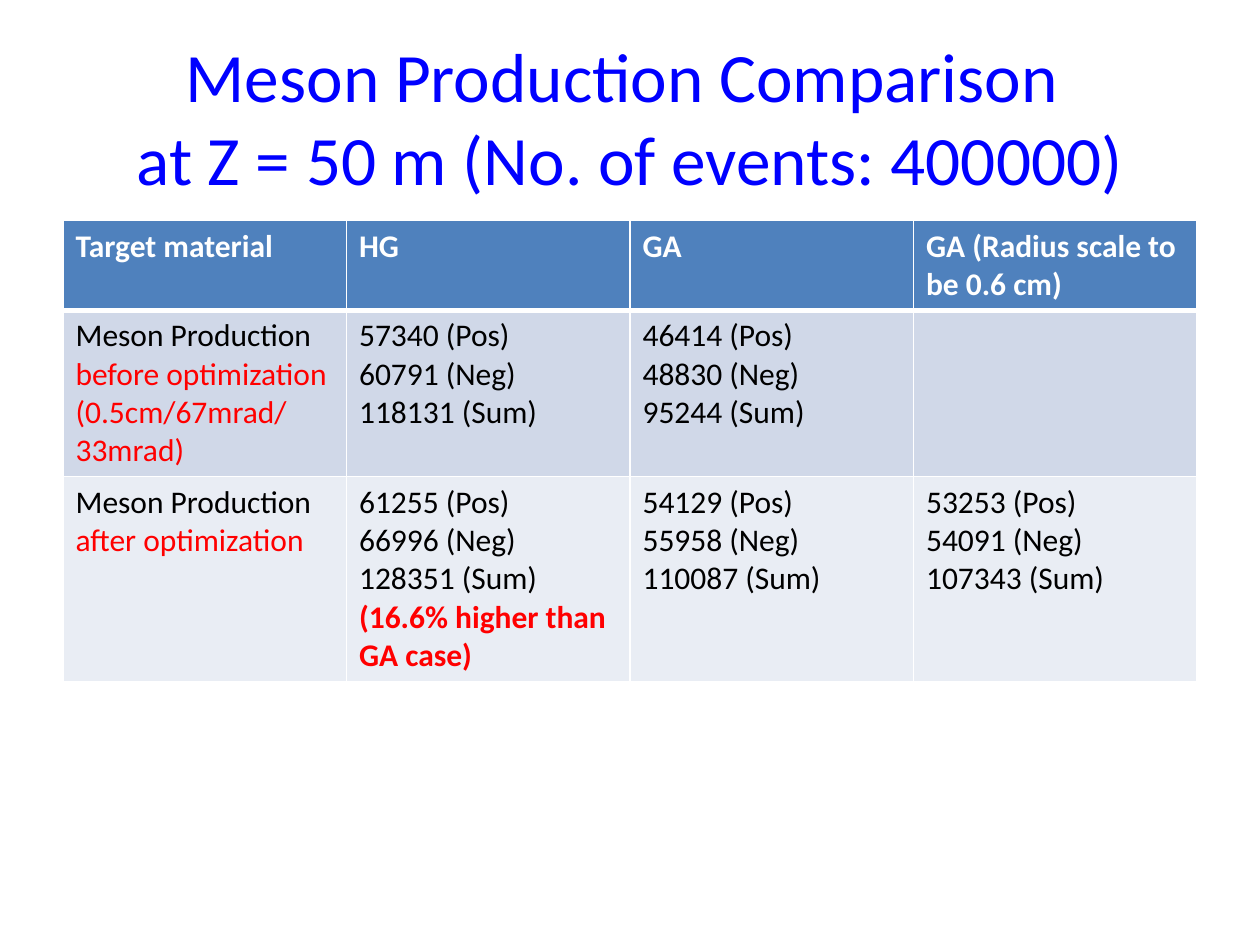
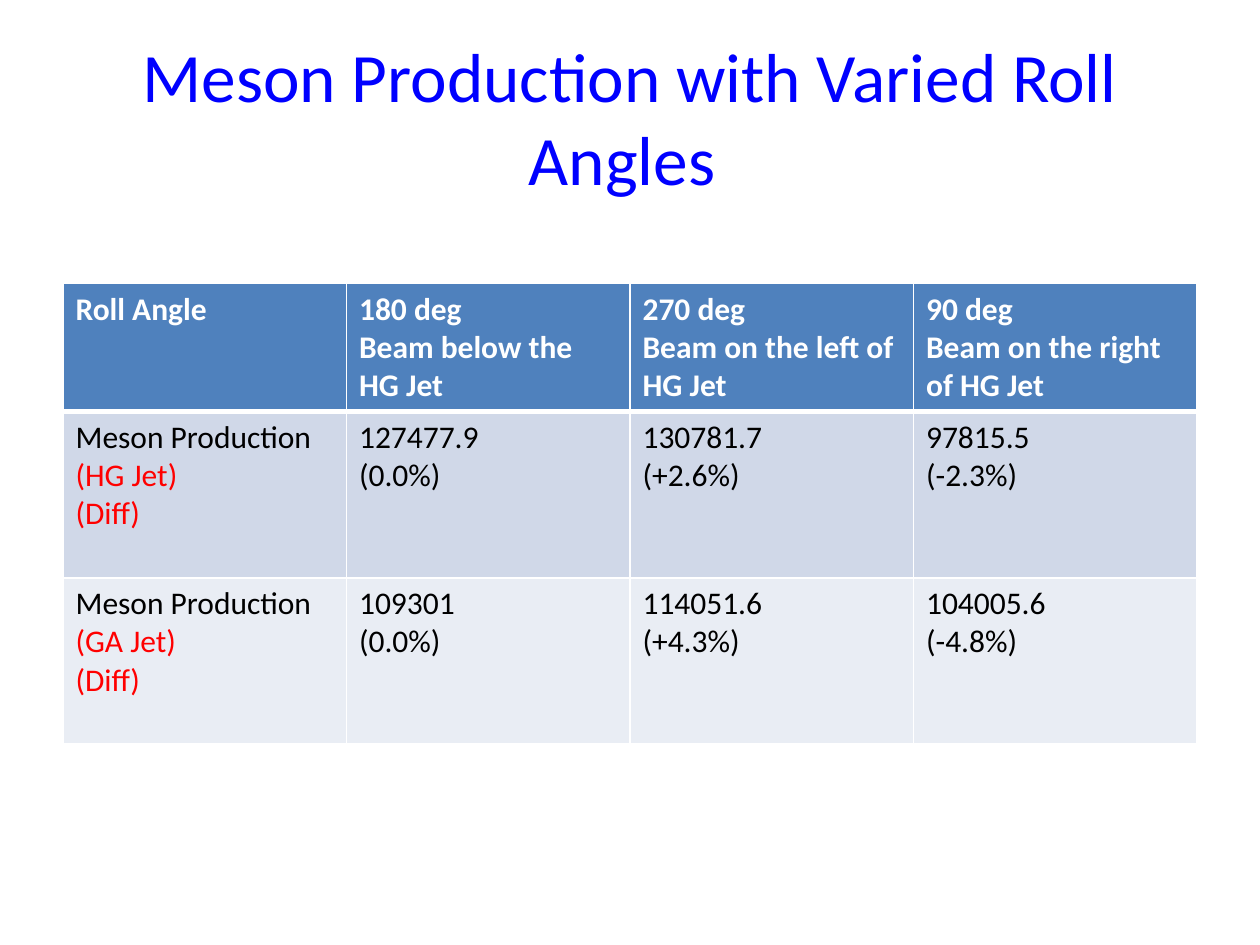
from lxml import etree
from pptx import Presentation
from pptx.dml.color import RGBColor
from pptx.enum.text import MSO_ANCHOR, MSO_AUTO_SIZE, PP_ALIGN
from pptx.oxml.ns import qn
from pptx.util import Cm, Pt

MIDDLE = MSO_ANCHOR.MIDDLE
NO_FIT = MSO_AUTO_SIZE.NONE
CENTER = PP_ALIGN.CENTER

HUES = {
    "title": "0000FF",
    "head": "4F81BD",
    "odd": "D0D8E8",
    "even": "E9EDF4",
    "text": "000000",
    "note": "FF0000",
    "white": "FFFFFF",
}
FONT = "Calibri"
LEFT, WIDTH = 1.27, 22.86
LINE, PAD = 0.775, 0.25  # height of a text line, and cell margins, in cm

# Rows of cells; each cell is a list of lines
TARGETS = [
    [["Target material"], ["HG"], ["GA"], ["GA (Radius scale to be 0.6 cm)"]],
    [["Meson Production", "before optimization", "(0.5cm/67mrad/33mrad)"],
     ["57340 (Pos)", "60791 (Neg)", "118131 (Sum)"],
     ["46414 (Pos)", "48830 (Neg)", "95244 (Sum)"],
     []],
    [["Meson Production", "after optimization"],
     ["61255 (Pos)", "66996 (Neg)", "128351 (Sum)",
      "(16.6% higher than GA case)"],
     ["54129 (Pos)", "55958 (Neg)", "110087 (Sum)"],
     ["53253 (Pos)", "54091 (Neg)", "107343 (Sum)"]],
]
ANGLES = [
    [["Roll Angle"],
     ["180 deg", "Beam below the HG Jet"],
     ["270 deg", "Beam on the left of HG Jet"],
     ["90 deg", "Beam on the right of HG Jet"]],
    [["Meson Production", "(HG Jet)", "(Diff)"],
     ["127477.9", "(0.0%)"], ["130781.7", "(+2.6%)"], ["97815.5", "(-2.3%)"]],
    [["Meson Production", "(GA Jet)", "(Diff)"],
     ["109301", "(0.0%)"], ["114051.6", "(+4.3%)"], ["104005.6", "(-4.8%)"]],
]


def style(par, size, hue, bold=False):
    for run in par.runs:
        run.font.name = FONT
        run.font.size = Pt(size)
        run.font.bold = bold
        run.font.color.rgb = RGBColor.from_string(HUES[hue])


def add_title(slide, text):
    title = slide.shapes.title
    title.left, title.top = Cm(LEFT), Cm(0.76)
    title.width, title.height = Cm(WIDTH), Cm(3.18)
    frame = title.text_frame
    frame.text = text
    frame.auto_size = NO_FIT
    frame.word_wrap = True
    frame.vertical_anchor = MIDDLE
    for par in frame.paragraphs:
        par.alignment = CENTER
        style(par, 39.6, "title")


def add_edges(cell, top, bottom):
    props = cell._tc.get_or_add_tcPr()
    for side, width in (("L", 1), ("R", 1), ("T", top), ("B", bottom)):
        edge = etree.SubElement(props, qn("a:ln" + side), w=str(Pt(width)))
        fill = etree.SubElement(edge, qn("a:solidFill"))
        etree.SubElement(fill, qn("a:srgbClr"), val=HUES["white"])


def fill_cell(cell, lines, row, col):
    # The rule under the header is thicker than the others
    add_edges(cell, 3 if row == 1 else 1, 3 if row == 0 else 1)
    cell.fill.solid()
    band = ("head", "odd", "even")[row]
    cell.fill.fore_color.rgb = RGBColor.from_string(HUES[band])
    cell.text_frame.text = "\n".join(lines)
    for i, par in enumerate(cell.text_frame.paragraphs):
        if row == 0:
            style(par, 18, "white", bold=True)
        elif col == 0:
            style(par, 18, "note" if i else "text")
        else:
            # A fourth line below the values is a remark
            remark = i == 3
            style(par, 18, "note" if remark else "text", bold=remark)


def add_grid(slide, top, rows, counts):
    """Add a table; counts holds the text lines that each row has room for."""
    highs = [count * LINE + PAD for count in counts]
    cols = len(rows[0])
    table = slide.shapes.add_table(len(rows), cols, Cm(LEFT), Cm(top),
                                   Cm(WIDTH), Cm(sum(highs))).table
    for col in table.columns:
        col.width = Cm(WIDTH / cols)
    for r, cells in enumerate(rows):
        table.rows[r].height = Cm(highs[r])
        for c, lines in enumerate(cells):
            fill_cell(table.cell(r, c), lines, r, c)


def add_page(deck, title, top, rows, counts):
    slide = deck.slides.add_slide(deck.slide_layouts[5])
    add_title(slide, title)
    add_grid(slide, top, rows, counts)


def main():
    deck = Presentation()
    deck.slide_width, deck.slide_height = Cm(25.4), Cm(19.05)

    # Target materials
    add_page(deck, "Meson Production Comparison \vat Z = 50 m "
             "(No. of events: 400000)", 4.45, TARGETS, (2, 4, 5))
    # Roll angles
    add_page(deck, "Meson Production with Varied Roll Angles ",
             5.72, ANGLES, (3, 4, 4))

    deck.save("out.pptx")


if __name__ == "__main__":
    main()
